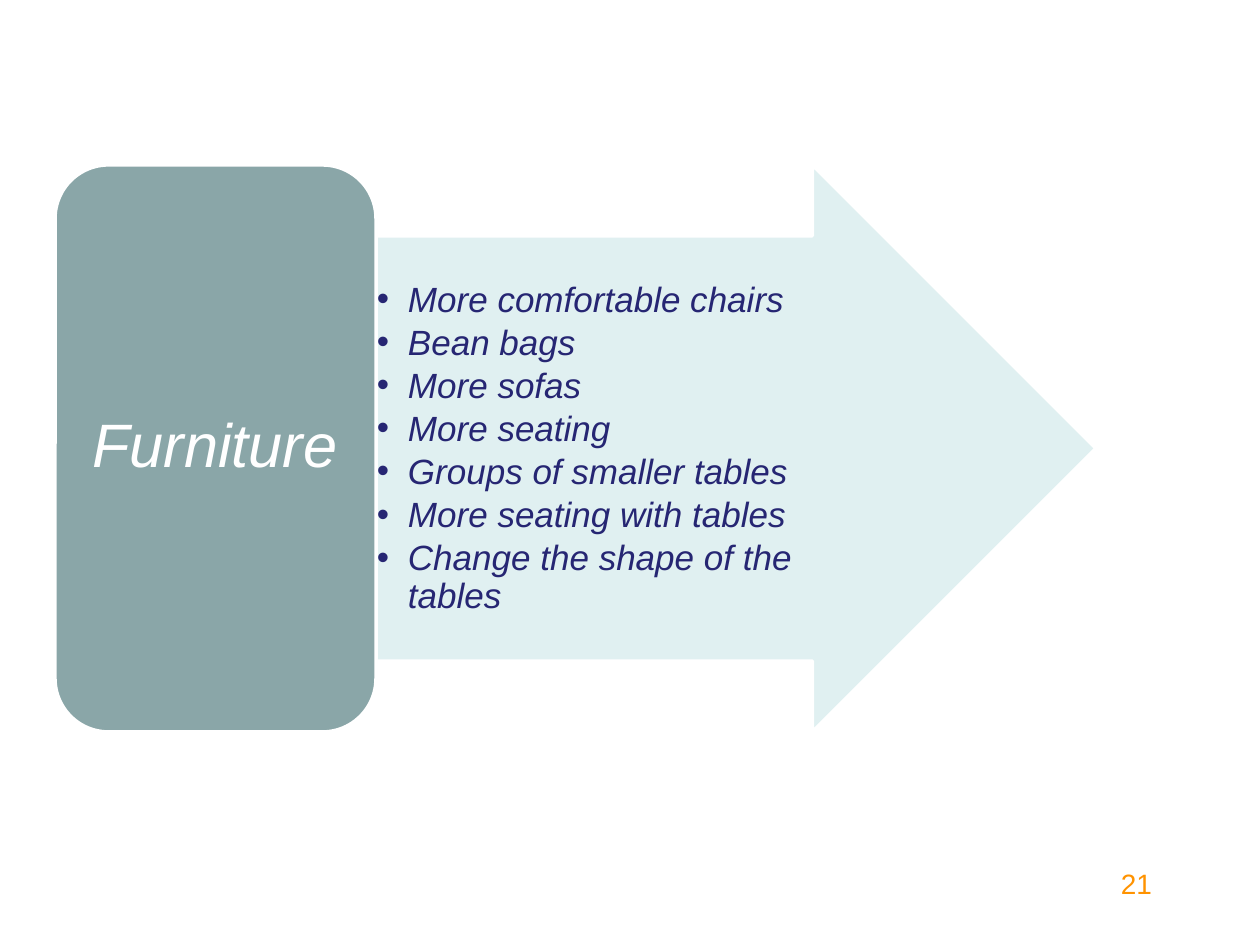
from lxml import etree
from pptx import Presentation
from pptx.dml.color import RGBColor
from pptx.enum.shapes import MSO_SHAPE
from pptx.enum.text import MSO_ANCHOR, PP_ALIGN
from pptx.oxml.ns import qn
from pptx.util import Pt

PX = 914400 // 126
ARROW = MSO_SHAPE.RIGHT_ARROW
ROUNDED = MSO_SHAPE.ROUNDED_RECTANGLE
TOP = MSO_ANCHOR.TOP
MIDDLE = MSO_ANCHOR.MIDDLE
LEFT = PP_ALIGN.LEFT
CENTER = PP_ALIGN.CENTER
RIGHT = PP_ALIGN.RIGHT
FONT = "Arial"
IDEAS = [
    "More comfortable chairs",
    "Bean bags",
    "More sofas",
    "More seating",
    "Groups of smaller tables",
    "More seating with tables",
    "Change the shape of the tables",
]


def px(length):
    return length * PX


def color(value):
    return RGBColor.from_string(value)


def add_panel(page, kind, area, fill, opacity=100):
    panel = page.shapes.add_shape(kind, *map(px, area))
    panel.shadow.inherit = False
    panel.fill.solid()
    panel.fill.fore_color.rgb = color(fill)
    if opacity < 100:
        tint = panel.fill._xPr.find(".//" + qn("a:srgbClr"))
        etree.SubElement(tint, qn("a:alpha"), val=str(opacity * 1000))
    panel.line.color.rgb = color("FFFFFF")
    panel.line.width = Pt(2)
    return panel


def add_bullet(para, indent):
    properties = para._p.get_or_add_pPr()
    properties.set("marL", str(px(indent)))
    properties.set("indent", str(-px(indent)))
    etree.SubElement(properties, qn("a:buFont"), typeface=FONT)
    etree.SubElement(properties, qn("a:buChar"), char="•")


def add_text(page, area, lines, size, ink, align=LEFT, anchor=TOP,
             insets=(13, 6), italic=True, spacing=None, after=0, bullet=0):
    box = page.shapes.add_textbox(*map(px, area))
    frame = box.text_frame
    frame.word_wrap = True
    frame.vertical_anchor = anchor
    frame.margin_left = frame.margin_right = px(insets[0])
    frame.margin_top = frame.margin_bottom = px(insets[1])
    for index, line in enumerate(lines):
        para = frame.add_paragraph() if index else frame.paragraphs[0]
        if bullet:
            add_bullet(para, bullet)
        para.alignment = align
        para.line_spacing = spacing
        para.space_after = Pt(after)
        span = para.add_run()
        span.text = line
        span.font.name = FONT
        span.font.size = Pt(size)
        span.font.italic = italic
        span.font.color.rgb = color(ink)


def main():
    deck = Presentation()
    deck.slide_width = px(1260)
    deck.slide_height = px(945)
    page = deck.slides.add_slide(deck.slide_layouts[6])

    arrow = add_panel(page, ARROW, (376, 165, 720, 567), "DDEFF0", 90)
    arrow.adjustments[0] = 0.75
    arrow.adjustments[1] = 0.5
    add_text(page, (376, 281, 508, 380), IDEAS, 20, "262673",
             insets=(1, 1), spacing=0.9, after=3, bullet=31)

    add_panel(page, ROUNDED, (55, 165, 321, 567), "8AA6A8")
    add_text(page, (70, 180, 290, 536), ["Furniture"], 35, "FFFFFF", CENTER,
             MIDDLE, insets=(19, 9), spacing=0.9)

    add_text(page, (903, 861, 262, 63), ["21"], 16, "FF9300", RIGHT,
             italic=False)
    deck.save("out.pptx")


if __name__ == "__main__":
    main()
